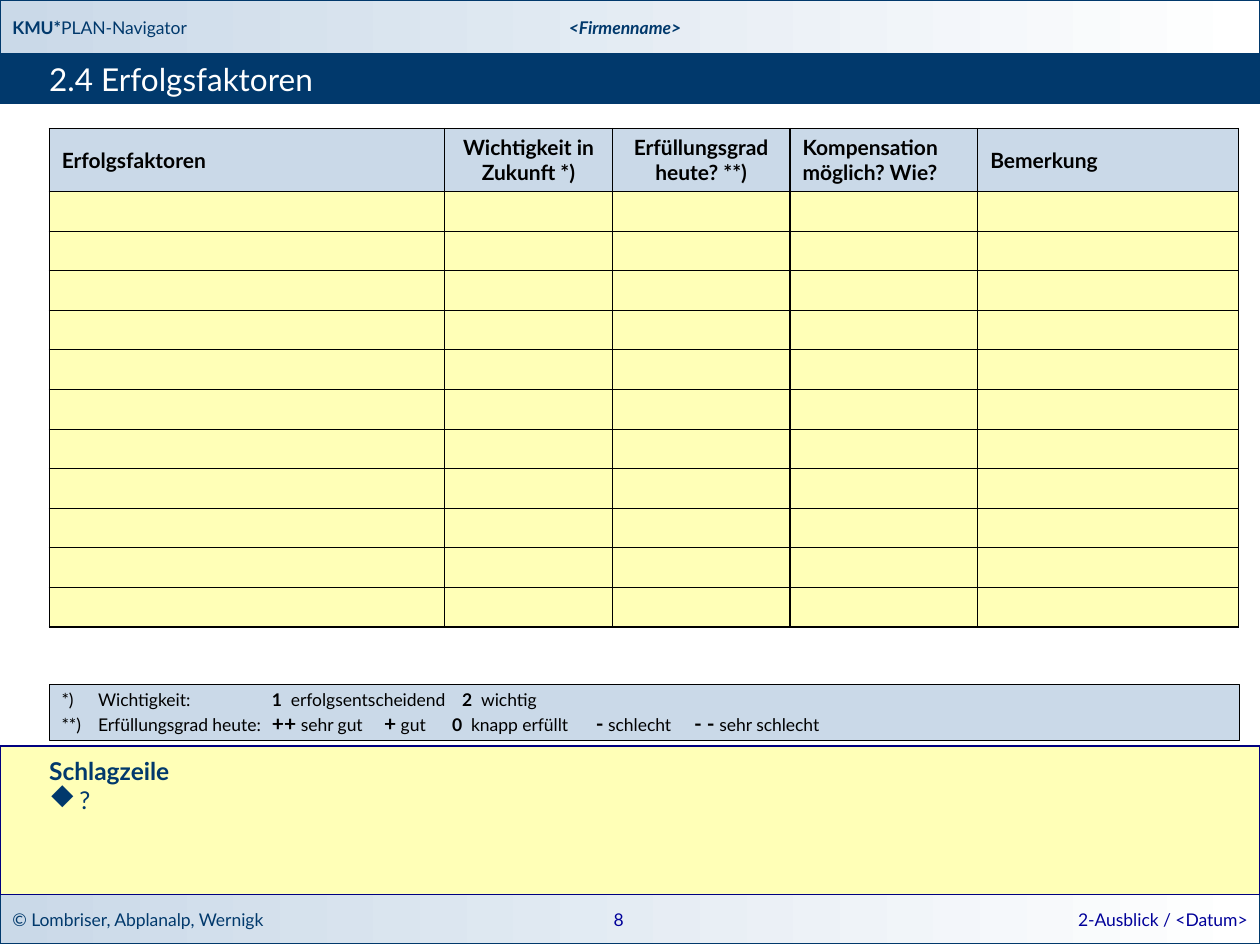
import pptx
import pptx.util
import pptx.dml.color
import pptx.enum.shapes
import pptx.enum.text
from lxml import etree

Inches, Pt = pptx.util.Inches, pptx.util.Pt
ALIGN = pptx.enum.text.PP_ALIGN
ANCHOR = pptx.enum.text.MSO_ANCHOR

# Content
FONT = "Lato"
NAVY, PALE, YELLOW, BLUE, BLACK, WHITE = (
    "01396C", "CAD9E8", "FFFFB7", "000099", "000000", "FFFFFF")
BOLD = {"bold": True}
SIGN = {"bold": True, "size": Pt(12)}

TITLE = "2.4 Erfolgsfaktoren"
COLUMNS = [  # heading, width, alignment
    ("Erfolgsfaktoren", 3.14, ALIGN.LEFT),
    ("Wichtigkeit in Zukunft *)", 1.33, ALIGN.CENTER),
    ("Erfüllungsgrad heute? **)", 1.41, ALIGN.CENTER),
    ("Kompensation möglich? Wie?", 1.49, ALIGN.LEFT),
    ("Bemerkung", 2.07, ALIGN.LEFT),
]
EMPTY_ROWS = 11
HEADER_HEIGHT, TABLE_HEIGHT = 0.5, 3.96
LEFT, WIDTH = 0.39, 9.45

LEGEND = [  # tab stops, runs
    ([0.29, 1.67, 1.82, 3.18, 3.33],
     [("*)\tWichtigkeit:\t", {}), ("1", BOLD), ("\terfolgsentscheidend\t", {}),
      ("2", BOLD), ("\twichtig", {})]),
    ([0.29, 1.67, 2.56, 3.1, 3.25, 4.24, 5.02],
     [("**)\tErfüllungsgrad heute:\t", {}), ("++", SIGN), (" sehr gut\t", {}),
      ("+", SIGN), (" gut\t", {}), ("0", BOLD), ("\tknapp erfüllt\t", {}),
      ("-", SIGN), (" schlecht\t", {}), ("- -", SIGN), (" sehr schlecht", {})]),
]


def rgb(value):
    return pptx.dml.color.RGBColor.from_string(value)


def apply(target, values):
    for name, value in values.items():
        setattr(target, name, value)


def child(parent, tag, **attributes):
    element = etree.SubElement(parent, pptx.oxml.ns.qn(tag))
    for name, value in attributes.items():
        element.set(name, str(value))
    return element


def write(paragraph, runs, color, size=10, align=ALIGN.LEFT):
    paragraph.alignment = align
    for text, style in runs:
        run = paragraph.add_run()
        run.text = text
        apply(run.font, {"name": FONT, "size": Pt(size), "bold": False, **style})
        run.font.color.rgb = rgb(color)


def set_frame(frame, margins=(0.1, 0.05, 0.1, 0.05), anchor=ANCHOR.MIDDLE):
    names = ("margin_left", "margin_top", "margin_right", "margin_bottom")
    apply(frame, {name: Inches(margin) for name, margin in zip(names, margins)})
    apply(frame, {"word_wrap": True, "vertical_anchor": anchor})


def add_bar(slide, box, fill, line):
    shape = slide.shapes.add_shape(
        pptx.enum.shapes.MSO_SHAPE.RECTANGLE, *map(Inches, box))
    shape.shadow.inherit = False
    if isinstance(fill, tuple):
        shape.fill.gradient()
        shape.fill.gradient_angle = 0
        for stop, position, color in zip(shape.fill.gradient_stops, (0, 1), fill):
            stop.position = position
            stop.color.rgb = rgb(color)
    else:
        shape.fill.solid()
        shape.fill.fore_color.rgb = rgb(fill)
    shape.line.color.rgb = rgb(line)
    shape.line.width = Pt(0.75)
    set_frame(shape.text_frame)
    return shape


def add_label(slide, box, text, color, align, **style):
    frame = slide.shapes.add_textbox(*map(Inches, box)).text_frame
    set_frame(frame)
    write(frame.paragraphs[0], [(text, style)], color, align=align)


def add_factor_table(slide):
    row_height = (TABLE_HEIGHT - HEADER_HEIGHT) / EMPTY_ROWS
    table = slide.shapes.add_table(
        EMPTY_ROWS + 1, len(COLUMNS), Inches(LEFT), Inches(1.02),
        Inches(WIDTH), Inches(TABLE_HEIGHT)).table
    for column, (_, width, _) in zip(table.columns, COLUMNS):
        column.width = Inches(width)
    for index, row in enumerate(table.rows):
        row.height = Inches(row_height if index else HEADER_HEIGHT)
        for cell, (heading, _, align) in zip(row.cells, COLUMNS):
            properties = cell._tc.get_or_add_tcPr()
            for side in ("a:lnL", "a:lnR", "a:lnT", "a:lnB"):
                border = child(properties, side, w=Pt(0.75))
                child(child(border, "a:solidFill"), "a:srgbClr", val=BLACK)
            cell.fill.solid()
            cell.fill.fore_color.rgb = rgb(YELLOW if index else PALE)
            cell.vertical_anchor = ANCHOR.MIDDLE
            paragraph = cell.text_frame.paragraphs[0]
            if index:
                paragraph._p.get_or_add_endParaRPr().set("sz", "1200")
            else:
                write(paragraph, [(heading, BOLD)], BLACK, 12, align)


def main():
    presentation = pptx.Presentation()
    presentation.slide_width, presentation.slide_height = Inches(10), Inches(7.5)
    slide = presentation.slides.add_slide(presentation.slide_layouts[5])

    # Header and footer bars
    footer = add_bar(slide, (0, 7.1, 10, 0.39), (PALE, WHITE), NAVY)
    write(footer.text_frame.paragraphs[0],
          [("© Lombriser, Abplanalp, Wernigk", {})], NAVY)
    header = add_bar(slide, (0, 0, 10, 0.43), (PALE, WHITE), NAVY)
    write(header.text_frame.paragraphs[0],
          [("KMU*", BOLD), ("PLAN-Navigator", {})], NAVY)
    add_bar(slide, (0, 0.43, 10, 0.39), NAVY, NAVY)
    add_label(slide, (3.19, 0, 3.54, 0.44), "<Firmenname>", NAVY,
              ALIGN.CENTER, bold=True, italic=True)
    add_label(slide, (6.83, 7.1, 3.17, 0.4), "2-Ausblick / <Datum>", BLUE,
              ALIGN.RIGHT)
    add_label(slide, (4.67, 7.1, 0.48, 0.39), "8", BLUE, ALIGN.CENTER)

    # Title, brought in front of its band
    title = slide.shapes.title
    apply(title, {"left": Inches(LEFT), "top": Inches(0.43),
                  "width": Inches(9.29), "height": Inches(0.39)})
    set_frame(title.text_frame, (0, 0, 0, 0))
    write(title.text_frame.paragraphs[0], [(TITLE, {})], WHITE, 18)
    slide.shapes._spTree.append(title._element)

    add_factor_table(slide)

    # Headline box; "u" is the diamond of the symbol font
    headline = add_bar(slide, (0, 5.92, 10, 1.18), YELLOW, "000080").text_frame
    set_frame(headline, (LEFT, 0.08, 0.2, 0.08), ANCHOR.TOP)
    write(headline.paragraphs[0], [("Schlagzeile", BOLD)], NAVY, 14)
    bullet = headline.add_paragraph()
    properties = bullet._p.get_or_add_pPr()
    for name, value in {"marL": 0.24, "indent": -0.24}.items():
        properties.set(name, str(Inches(value)))
    child(properties, "a:buSzPct", val=110000)
    child(properties, "a:buFont", typeface="Wingdings", charset=2)
    child(properties, "a:buChar", char="u")
    write(bullet, [("?", {})], NAVY, 14)

    # Legend
    legend = add_bar(slide, (LEFT, 5.43, WIDTH, 0.45), PALE, BLACK).text_frame
    set_frame(legend, (0.1, 0.04, 0.1, 0.04))
    for index, (stops, runs) in enumerate(LEGEND):
        paragraph = legend.add_paragraph() if index else legend.paragraphs[0]
        tabs = child(paragraph._p.get_or_add_pPr(), "a:tabLst")
        for stop in stops:
            child(tabs, "a:tab", pos=Inches(stop), algn="l")
        write(paragraph, runs, BLACK)

    presentation.save("out.pptx")


if __name__ == "__main__":
    main()
